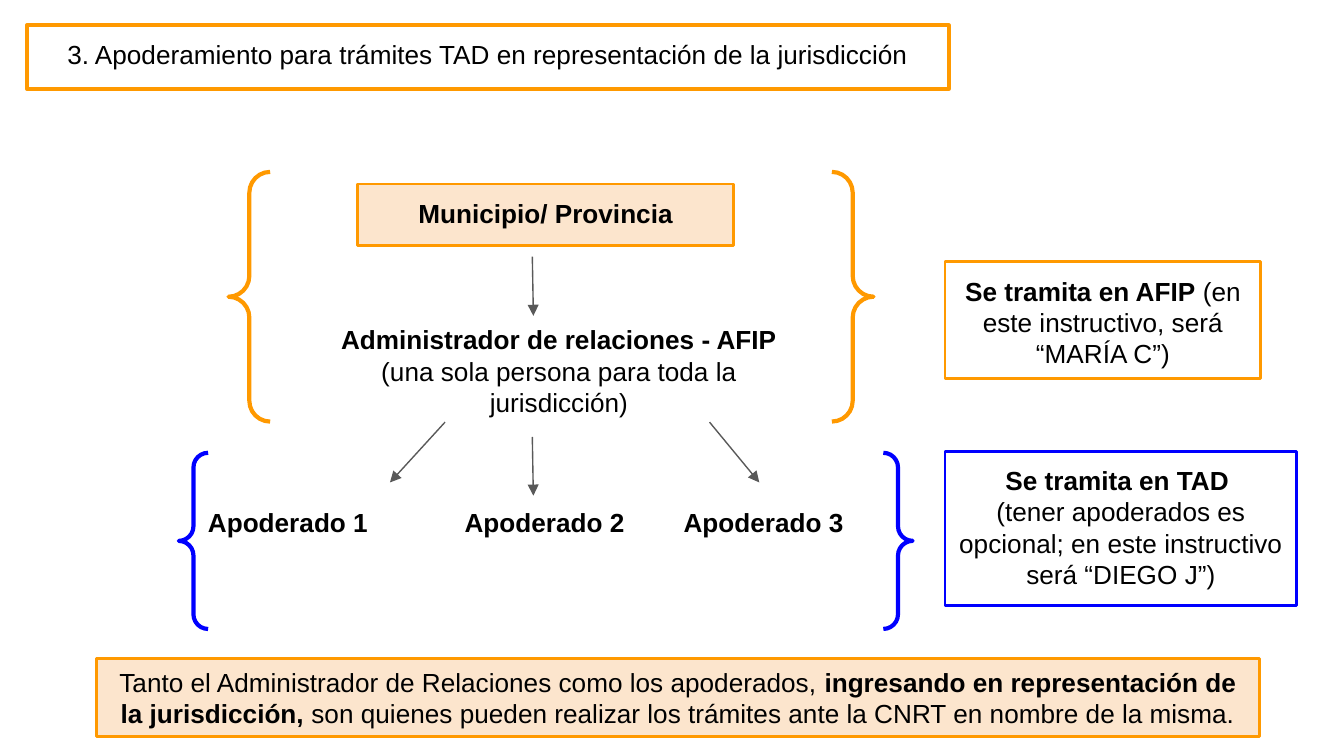
"""Build the slide on granting powers of attorney for TAD procedures."""
import pptx
import pptx.dml.color
import pptx.enum.shapes
import pptx.enum.text
import pptx.oxml
import pptx.util
from pptx.util import Cm

ORANGE = pptx.dml.color.RGBColor(0xFF, 0x99, 0x00)
PEACH = pptx.dml.color.RGBColor(0xFC, 0xE5, 0xCD)
BLUE = pptx.dml.color.RGBColor(0x00, 0x00, 0xFF)
GRAY = pptx.dml.color.RGBColor(0x59, 0x59, 0x59)
BLACK = pptx.dml.color.RGBColor(0x00, 0x00, 0x00)

SHAPES = pptx.enum.shapes.MSO_SHAPE
ALIGN = pptx.enum.text.PP_ALIGN
ANCHOR = pptx.enum.text.MSO_ANCHOR


def write_text(shape, paragraphs, align=ALIGN.CENTER, anchor=ANCHOR.TOP):
    """Fill a shape with paragraphs, each a list of (text, bold) runs."""
    frame = shape.text_frame
    frame.word_wrap = True
    frame.auto_size = pptx.enum.text.MSO_AUTO_SIZE.NONE
    frame.vertical_anchor = anchor
    frame.margin_left = frame.margin_right = Cm(0.25)
    frame.margin_top = frame.margin_bottom = Cm(0.25)
    for index, runs in enumerate(paragraphs):
        paragraph = frame.add_paragraph() if index else frame.paragraphs[0]
        paragraph.alignment = align
        font = paragraph.font
        font.name = "Arial"
        font.size = pptx.util.Pt(14)
        font.color.rgb = BLACK
        same_weight = len({bold for _, bold in runs}) == 1
        if same_weight:
            font.bold = runs[0][1]
        for text, bold in runs:
            run = paragraph.add_run()
            run.text = text
            if not same_weight:
                run.font.bold = bold


def set_outline(shape, color, width):
    """Give a shape a solid outline."""
    shape.line.color.rgb = color
    shape.line.width = pptx.util.Pt(width)


def add_title(slide, text, left, top, width, height):
    """Place the framed title."""
    title = slide.shapes.title
    title.left, title.top = Cm(left), Cm(top)
    title.width, title.height = Cm(width), Cm(height)
    set_outline(title, ORANGE, 2.25)
    write_text(title, [[(text, False)]])


def add_outlined_shape(slide, kind, box, color, width, fill=None):
    """Add a preset shape with an outline and an optional fill."""
    shape = slide.shapes.add_shape(kind, *map(Cm, box))
    shape.shadow.inherit = False
    set_outline(shape, color, width)
    if fill is None:
        shape.fill.background()
    else:
        shape.fill.solid()
        shape.fill.fore_color.rgb = fill
    return shape


def add_braces(slide, box, color):
    """Add a pair of braces around a level of the diagram."""
    add_outlined_shape(slide, SHAPES.DOUBLE_BRACE, box, color, 2.25)


def add_box(slide, paragraphs, box, color, fill=None, anchor=ANCHOR.TOP):
    """Add a rectangle with text."""
    shape = add_outlined_shape(slide, SHAPES.RECTANGLE, box, color, 1.5, fill)
    write_text(shape, paragraphs, anchor=anchor)


def add_label(slide, paragraphs, box, align=ALIGN.CENTER):
    """Add text without a frame."""
    write_text(slide.shapes.add_textbox(*map(Cm, box)), paragraphs, align)


def add_arrow(slide, start, end):
    """Add a thin arrow between two points."""
    arrow = slide.shapes.add_connector(
        pptx.enum.shapes.MSO_CONNECTOR.STRAIGHT, *map(Cm, start + end))
    set_outline(arrow, GRAY, 0.75)
    line = arrow.line._get_or_add_ln()
    pptx.oxml.xmlchemy.OxmlElement("a:tailEnd")
    head = pptx.oxml.xmlchemy.OxmlElement("a:tailEnd")
    head.set("type", "triangle")
    line.append(head)
    arrow._element.spPr.append(pptx.oxml.xmlchemy.OxmlElement("a:effectLst"))


def main():
    """Build and save the presentation."""
    presentation = pptx.Presentation()
    presentation.slide_width = Cm(25.4)
    presentation.slide_height = Cm(14.29)
    slide = presentation.slides.add_slide(presentation.slide_layouts[5])

    add_title(slide, "3. Apoderamiento para trámites TAD en representación de la jurisdicción",
              0.51, 0.48, 17.42, 1.2)

    add_braces(slide, (3.38, 8.56, 13.87, 3.33), BLUE)
    add_braces(slide, (4.32, 3.25, 12.19, 4.72), ORANGE)

    add_box(slide, [[("Municipio/ Provincia", True)]],
            (6.76, 3.48, 7.11, 1.17), ORANGE, PEACH)
    add_label(slide, [[("Administrador de relaciones - AFIP", True)],
                      [("(una sola persona para toda la jurisdicción)", False)]],
              (6.02, 5.87, 9.09, 1.17))
    for number, left in enumerate((3.68, 8.53, 12.67), start=1):
        add_label(slide, [[(f"Apoderado {number}", True)]],
                  (left, 9.32, 4.98, 1.12), ALIGN.LEFT)

    for start, end in (((10.06, 4.85), (10.08, 5.97)),
                       ((8.41, 7.98), (7.37, 9.12)),
                       ((10.06, 8.26), (10.08, 9.37)),
                       ((13.41, 7.98), (14.35, 9.12))):
        add_arrow(slide, start, end)

    add_box(slide, [[("Se tramita en AFIP", True),
                     (" (en este instructivo, será “MARÍA C”)", False)]],
            (17.86, 4.95, 5.97, 2.21), ORANGE)
    add_box(slide, [[("Se tramita en TAD ", True)],
                    [("(tener apoderados es opcional; en este instructivo será “DIEGO J”)",
                      False)]],
            (17.86, 8.53, 6.65, 2.92), BLUE)
    add_box(slide, [[("Tanto el Administrador de Relaciones como los apoderados, ", False),
                     ("ingresando en representación de la jurisdicción,", True),
                     (" son quienes pueden realizar los trámites ante la CNRT"
                      " en nombre de la misma.", False)]],
            (1.83, 12.45, 21.97, 1.47), ORANGE, PEACH, ANCHOR.MIDDLE)

    presentation.save("out.pptx")


if __name__ == "__main__":
    main()
